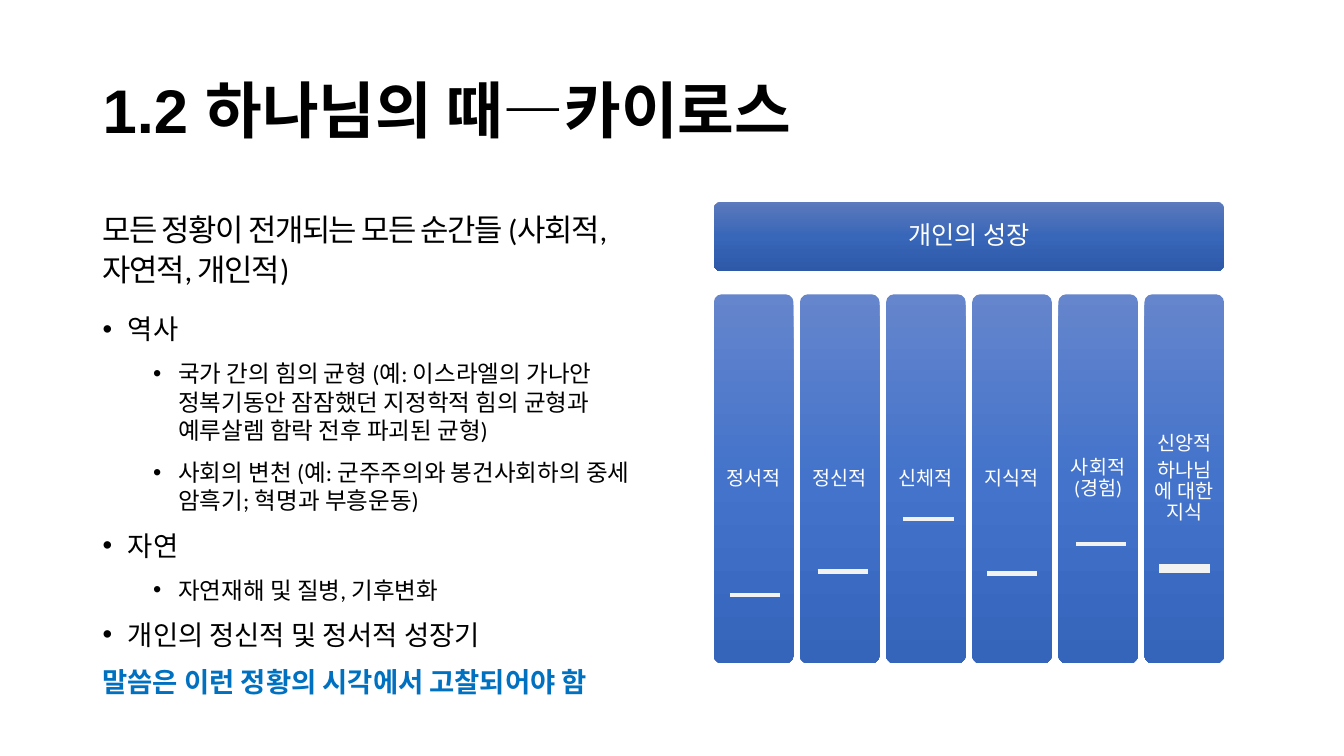
import copy
from dataclasses import dataclass

import pptx
import pptx.dml.color
import pptx.enum.shapes
import pptx.enum.text
import pptx.oxml
import pptx.oxml.ns
import pptx.util
from pptx.util import Inches

ALIGN = pptx.enum.text.PP_ALIGN
ANCHOR = pptx.enum.text.MSO_ANCHOR
qn = pptx.oxml.ns.qn


@dataclass(frozen=True)
class Theme:
    heading_font: str = "Arial"
    body_font: str = "Calibri"
    ink: str = "000000"
    accent: str = "0070C0"
    white: str = "FFFFFF"
    mark: str = "F2F2F2"
    banner_fill: tuple = ("5C7ABD", "3866B8", "2D59A8")
    column_fill: tuple = ("6585CC", "4373CB", "3564BB")
    title_size: float = 44
    lead_size: float = 22
    topic_size: float = 19.6
    detail_size: float = 16.8
    banner_size: float = 18
    column_size: float = 14


THEME = Theme()

# Outline entries: (kind, text)
OUTLINE = [
    ("topic", "역사"),
    ("detail", "국가 간의 힘의 균형 (예: 이스라엘의 가나안 정복기동안 잠잠했던 "
               "지정학적 힘의 균형과 예루살렘 함락 전후 파괴된 균형)"),
    ("detail", "사회의 변천 (예: 군주주의와 봉건사회하의 중세 암흑기; 혁명과 부흥운동)"),
    ("topic", "자연"),
    ("detail", "자연재해 및 질병, 기후변화"),
    ("topic", "개인의 정신적 및 정서적 성장기"),
    ("closing", "말씀은 이런 정황의 시각에서 고찰되어야 함"),
]
OUTLINE_STYLES = {
    "topic": dict(size=THEME.topic_size, bullet_indent=0.25),
    "detail": dict(size=THEME.detail_size, bullet_indent=0.75, level=1),
    "closing": dict(size=THEME.topic_size, color=THEME.accent, bold=True),
}

# Growth areas: (paragraphs, mark left, mark height on the page, mark width in points)
GROWTH_AREAS = [
    (["정서적"], 7.24, 5.9, 3),
    (["정신적"], 8.11, 5.67, 3),
    (["신체적"], 8.96, 5.15, 3),
    (["지식적"], 9.79, 5.69, 3),
    (["사회적 (경험)"], 10.67, 5.4, 3),
    (["신앙적", "하나님에 대한 지식"], 11.5, 5.64, 6),
]
CHART_LEFT, CHART_WIDTH = 7.08, 5.06
COLUMN_WIDTH, MARK_LENGTH = 0.79, 0.5


def rgb(value):
    return pptx.dml.color.RGBColor.from_string(value)


def write(frame, text, *, size, color=THEME.ink, font=THEME.body_font, bold=False,
          align=ALIGN.LEFT, line=1.0, before=0, after=0, level=0,
          bullet_indent=None, tracking=None):
    """Add one formatted paragraph, using the empty first one when it is free."""
    first = not frame.paragraphs[0].runs
    para = frame.paragraphs[0] if first else frame.add_paragraph()
    para.alignment = align
    para.level = level
    para.line_spacing = line
    para.space_before = pptx.util.Pt(0 if first else before)
    para.space_after = pptx.util.Pt(after)
    if bullet_indent:
        props = para._p.get_or_add_pPr()
        props.set("marL", str(Inches(bullet_indent)))
        props.set("indent", str(Inches(-0.25)))
        props.append(props.makeelement(qn("a:buFont"), {"typeface": THEME.heading_font}))
        props.append(props.makeelement(qn("a:buChar"), {"char": "•"}))
    span = para.add_run()
    span.text = text
    span.font.name = font
    span.font.size = pptx.util.Pt(size)
    span.font.bold = bold
    span.font.color.rgb = rgb(color)
    if tracking:
        span._r.get_or_add_rPr().set("spc", str(tracking * 100))


def add_text_box(page, left, top, width, height, anchor=ANCHOR.TOP):
    box = page.shapes.add_textbox(Inches(left), Inches(top), Inches(width), Inches(height))
    box.text_frame.word_wrap = True
    box.text_frame.vertical_anchor = anchor
    return box.text_frame


def fill_gradient(shape, colors):
    """Fill from top to bottom with three evenly spaced colours."""
    shape.fill.gradient()
    shape.fill.gradient_angle = 270
    first_stop = shape._element.spPr.find(".//" + qn("a:gs"))
    first_stop.addnext(copy.deepcopy(first_stop))
    for index, (stop, color) in enumerate(zip(shape.fill.gradient_stops, colors)):
        stop.position = index / 2
        stop.color.rgb = rgb(color)


def add_panel(group, left, top, width, height, texts, *, colors, size, inset):
    panel = group.shapes.add_shape(
        pptx.enum.shapes.MSO_SHAPE.ROUNDED_RECTANGLE,
        Inches(left), Inches(top), Inches(width), Inches(height))
    panel.adjustments[0] = 0.1
    panel.shadow.inherit = False
    panel.line.fill.background()
    fill_gradient(panel, colors)
    frame = panel.text_frame
    frame.word_wrap = True
    frame.vertical_anchor = ANCHOR.MIDDLE
    frame.margin_left = frame.margin_right = Inches(inset)
    frame.margin_top = frame.margin_bottom = Inches(inset)
    for text in texts:
        write(frame, text, size=size, color=THEME.white, align=ALIGN.CENTER,
              line=0.9, after=4)


def add_mark(group, left, top, weight):
    mark = group.shapes.add_connector(
        pptx.enum.shapes.MSO_CONNECTOR.STRAIGHT,
        Inches(left), Inches(top), Inches(left + MARK_LENGTH), Inches(top))
    mark.line.color.rgb = rgb(THEME.mark)
    mark.line.width = pptx.util.Pt(weight)
    props = mark._element.spPr
    props.append(props.makeelement(qn("a:effectLst"), {}))


def main():
    deck = pptx.Presentation()
    deck.slide_width, deck.slide_height = Inches(13.33), Inches(7.5)
    page = deck.slides.add_slide(deck.slide_layouts[6])

    # Title
    title = add_text_box(page, 0.92, 0.4, 11.5, 1.45, ANCHOR.MIDDLE)
    write(title, "1.2 하나님의 때—카이로스", size=THEME.title_size,
          font=THEME.heading_font, bold=True, line=0.9)

    # Lead sentence and outline
    lead = add_text_box(page, 0.92, 2, 5.67, 0.91)
    write(lead, "모든 정황이 전개되는 모든 순간들 (사회적, 자연적, 개인적)",
          size=THEME.lead_size, line=1.1, tracking=-1)
    outline = add_text_box(page, 0.92, 3.05, 5.67, 4.05)
    for kind, text in OUTLINE:
        write(outline, text, before=10, **OUTLINE_STYLES[kind])

    # Growth banner and its columns
    growth = page.shapes.add_group_shape()
    add_panel(growth, CHART_LEFT, 2, CHART_WIDTH, 0.69, ["개인의 성장"],
              colors=THEME.banner_fill, size=THEME.banner_size, inset=0.07)
    pitch = (CHART_WIDTH - COLUMN_WIDTH) / (len(GROWTH_AREAS) - 1)
    for index, (texts, *_) in enumerate(GROWTH_AREAS):
        add_panel(growth, CHART_LEFT + index * pitch, 2.92, COLUMN_WIDTH, 3.66, texts,
                  colors=THEME.column_fill, size=THEME.column_size, inset=0.06)

    # Level marks on the columns
    marks = page.shapes.add_group_shape()
    for _, left, top, weight in GROWTH_AREAS:
        add_mark(marks, left, top, weight)

    deck.save("out.pptx")


if __name__ == "__main__":
    main()
